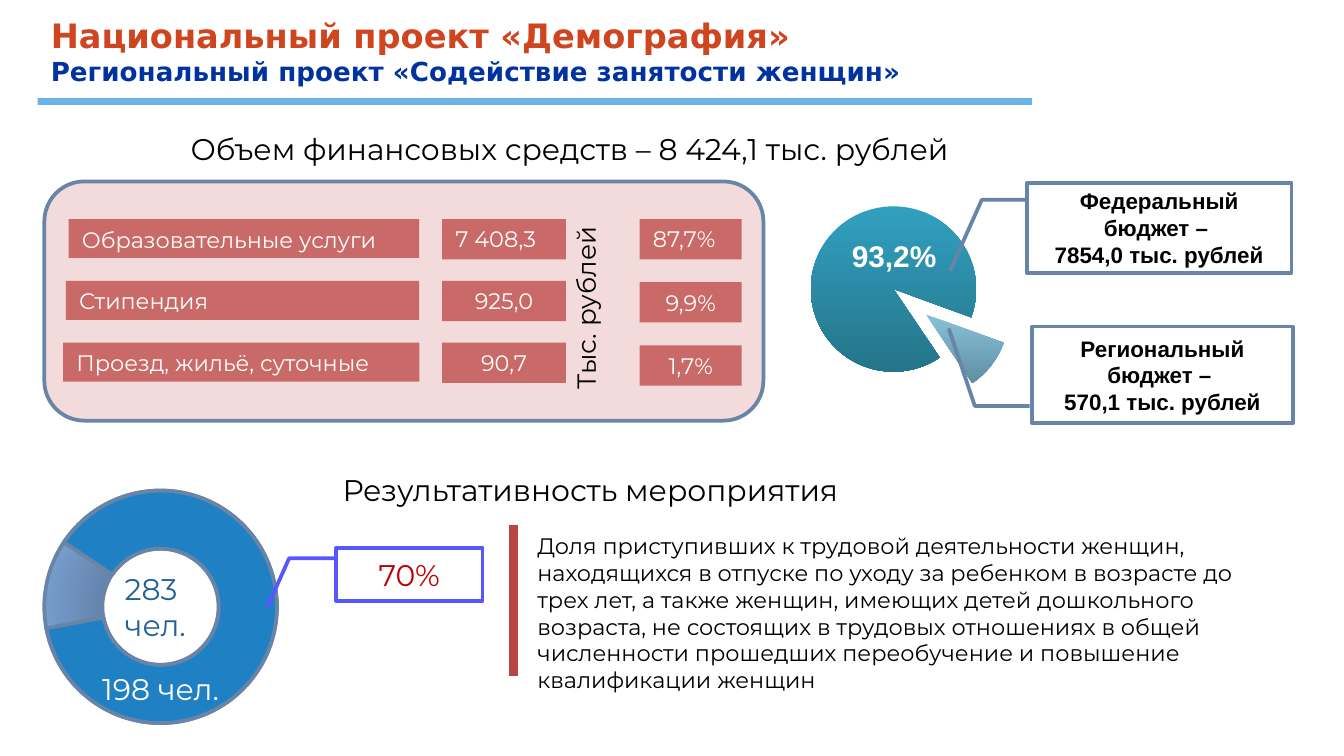
"""Builds the slide on the regional project supporting women's employment."""
from lxml import etree
from pptx import Presentation
from pptx.chart.data import CategoryChartData
from pptx.dml.color import RGBColor
from pptx.enum.chart import XL_CHART_TYPE
from pptx.enum.shapes import MSO_CONNECTOR, MSO_SHAPE
from pptx.enum.text import MSO_ANCHOR, MSO_AUTO_SIZE, PP_ALIGN
from pptx.oxml import parse_xml
from pptx.oxml.ns import nsdecls, qn
from pptx.util import Inches, Pt

LEFT, CENTER = PP_ALIGN.LEFT, PP_ALIGN.CENTER
TOP, MIDDLE = MSO_ANCHOR.TOP, MSO_ANCHOR.MIDDLE
GROW = MSO_AUTO_SIZE.SHAPE_TO_FIT_TEXT
PIE, STRAIGHT = XL_CHART_TYPE.PIE, MSO_CONNECTOR.STRAIGHT
RECT, CALLOUT = MSO_SHAPE.RECTANGLE, MSO_SHAPE.LINE_CALLOUT_2
PANEL, DONUT, ARC = MSO_SHAPE.ROUNDED_RECTANGLE, MSO_SHAPE.DONUT, MSO_SHAPE.BLOCK_ARC

THEME = {
    "colors": {
        "black": "000000", "white": "FFFFFF", "orange": "CF4520", "navy": "0033A0",
        "sky": "69B3E7", "red": "B84542", "cell": "CA6A68", "panel": "F2DBDA",
        "slate": "6884A7", "ring": "1F81C3", "count": "236199", "violet": "5757FF",
        "crimson": "C00000",
    },
    "gradients": {
        "federal": ("31A0C0", "247589"), "regional": ("88C2D8", "5F8FA3"),
        "ring": ("506A8A", "87B2E8"),
    },
    "text": {
        "project": {"name": "DejaVu Sans", "size": Pt(18), "bold": True, "color": "orange"},
        "subproject": {"name": "DejaVu Sans", "size": Pt(14), "bold": True, "color": "navy"},
        "heading": {"name": "Montserrat", "size": Pt(16), "color": "black"},
        "body": {"name": "Montserrat", "size": Pt(12), "color": "black"},
        "unit": {"name": "Montserrat", "size": Pt(14), "color": "black"},
        "cell": {"name": "Montserrat", "size": Pt(12), "color": "white"},
        "count": {"name": "Montserrat", "size": Pt(16), "color": "count"},
        "employed": {"name": "Montserrat", "size": Pt(16), "color": "white"},
        "result": {"name": "Montserrat", "size": Pt(16), "color": "crimson"},
        "budget": {"name": "Arial", "size": Pt(12), "bold": True, "color": "black"},
        "share": {"name": "Arial", "size": Pt(16), "bold": True, "color": "white"},
    },
}

TITLE = [("Национальный проект «Демография»", "project"),
         ("Региональный проект «Содействие занятости женщин»", "subproject")]
FUNDING = [("Объем финансовых средств – 8 424,1 тыс. рублей", "heading")]
EFFECT = [("Результативность мероприятия", "heading")]
INDICATOR = [(
    "Доля приступивших к трудовой деятельности женщин, находящихся в отпуске по уходу "
    "за ребенком в возрасте до трех лет, а также женщин, имеющих детей дошкольного "
    "возраста, не состоящих в трудовых отношениях в общей численности прошедших "
    "переобучение и повышение квалификации женщин", "body")]
TRAINED = [("283", "count"), ("чел.", "count")]
EMPLOYED = [("198 чел.", "employed")]
RESULT = [("70%", "result")]
UNIT = [("Тыс. рублей", "unit")]
FEDERAL_SHARE = [("93,2%", "share")]
EXPENSES = [("Образовательные услуги", "7 408,3", "87,7%"),
            ("Стипендия", "925,0", "9,9%"),
            ("Проезд, жильё, суточные", "90,7", "1,7%")]
BUDGETS = [
    (["Федеральный бюджет – ", "7854,0 тыс. рублей"], (7.64, 1.36, 1.97, 0.67),
     (0.19, 0, 0.19, -0.17, 0.98, -0.29)),
    (["Региональный бюджет – ", "570,1 тыс. рублей"], (7.68, 2.43, 1.94, 0.72),
     (0.82, -0.01, 0.82, -0.22, 0.02, -0.32)),
]
BUDGET_PIE = [("1", 90, "federal"), ("2", 10, "regional")]
PIE_START = 146
RING_BOX = (0.33, 3.65, 1.73, 1.73)


def color(key):
    return RGBColor.from_string(THEME["colors"][key])


def write(shape, lines, align=LEFT, **frame_format):
    frame = shape.text_frame
    for key, value in {"word_wrap": True, "vertical_anchor": TOP, **frame_format}.items():
        setattr(frame, key, value)
    for index, (line, style) in enumerate(lines):
        paragraph = frame.add_paragraph() if index else frame.paragraphs[0]
        paragraph.alignment = align
        run = paragraph.add_run()
        run.text = line
        for key, value in THEME["text"][style].items():
            if key == "color":
                run.font.color.rgb = color(value)
            else:
                setattr(run.font, key, value)


def add_text(slide, box, lines, align=LEFT, wrap=True):
    label = slide.shapes.add_textbox(*map(Inches, box))
    write(label, lines, align, word_wrap=wrap, auto_size=GROW)
    return label


def add_block(slide, preset, box, fill=None, line=None, adjust=()):
    block = slide.shapes.add_shape(preset, *map(Inches, box))
    block.shadow.inherit = False
    for target, key in ((block.fill, fill), (block.line.fill, line)):
        if key:
            target.solid()
            target.fore_color.rgb = color(key)
        else:
            target.background()
    if line:
        block.line.width = Pt(2)
    for index, value in enumerate(adjust):
        block.adjustments[index] = value
    return block


def set_gradient(fill, key):
    fill.gradient()
    fill.gradient_angle = 270
    for stop, value, position in zip(fill.gradient_stops, THEME["gradients"][key], (0, 1)):
        stop.color.rgb = RGBColor.from_string(value)
        stop.position = position


def add_ring(slide):
    ring = add_block(slide, DONUT, RING_BOX, line="slate")
    set_gradient(ring.fill, "ring")
    linear = ring._element.spPr.find(qn("a:gradFill")).find(qn("a:lin"))
    linear.getparent().replace(linear, parse_xml(
        f'<a:path {nsdecls("a")} path="circle">'
        '<a:fillToRect l="50000" t="50000" r="50000" b="50000"/></a:path>'))
    arc = add_block(slide, ARC, RING_BOX, "ring", "slate", (26.61, 0, 0.25))
    arc.rotation = 169.4
    add_text(slide, (0.83, 4.2, 0.74, 0.64), TRAINED, wrap=False)
    add_text(slide, (0.56, 4.94, 1.27, 0.37), EMPLOYED, CENTER)


def add_budget_pie(slide):
    data = CategoryChartData()
    data.categories = [name for name, _, _ in BUDGET_PIE]
    data.add_series("Series 1", [value for _, value, _ in BUDGET_PIE])
    box = map(Inches, (5.55, 1.35, 2.44, 1.81))
    chart = slide.shapes.add_chart(PIE, *box, data).chart
    chart.has_legend = chart.has_title = False
    chart.font.name, chart.font.size = "Calibri", Pt(18)
    chart.font.color.rgb = color("black")
    plot = chart.plots[0]
    plot.vary_by_categories = True
    series = plot.series[0]
    for index, (_, _, gradient) in enumerate(BUDGET_PIE):
        point_format = series.points[index].format
        set_gradient(point_format.fill, gradient)
        point_format.line.fill.background()
    series._element.find(qn("c:dPt")).addprevious(
        parse_xml(f'<c:explosion {nsdecls("c")} val="25"/>'))
    pie = plot._element
    angle = pie.find(qn("c:firstSliceAng"))
    if angle is None:
        angle = etree.SubElement(pie, qn("c:firstSliceAng"))
    angle.set("val", str(PIE_START))
    area = pie.getparent()
    for layout in area.findall(qn("c:layout")):
        area.remove(layout)
    parts = {"layoutTarget": "inner", "xMode": "edge", "yMode": "edge",
             "x": 0.18, "y": 0.07, "w": 0.64, "h": 0.85}
    settings = "".join(f'<c:{key} val="{value}"/>' for key, value in parts.items())
    area.insert(0, parse_xml(
        f'<c:layout {nsdecls("c")}><c:manualLayout>{settings}</c:manualLayout></c:layout>'))


def add_expenses(slide):
    add_block(slide, PANEL, (0.33, 1.35, 5.35, 1.78), line="slate", fill="panel")
    for row, (expense, amount, share) in enumerate(EXPENSES):
        label_left = 0.51 - 0.02 * row
        number_align = CENTER if row else LEFT
        cells = [(expense, (label_left, 1.63 + 0.46 * row, 3.12 - label_left, 0.29), LEFT),
                 (amount, (3.29, 1.63 + 0.46 * row, 0.92, 0.3), number_align),
                 (share, (4.76, 1.63 + 0.47 * row, 0.76, 0.3), number_align)]
        for entry, box, align in cells:
            write(add_block(slide, RECT, box, "cell"), [(entry, "cell")], align)
    unit = add_text(slide, (4.19, 1.52, 0.44, 1.48), UNIT, wrap=False)
    unit.text_frame._txBody.bodyPr.set("vert", "vert270")


def main():
    deck = Presentation()
    deck.slide_width = Inches(10)
    deck.slide_height = deck.slide_width * 9 // 16
    slide = deck.slides.add_slide(deck.slide_layouts[6])
    add_text(slide, (3.9, 3.91, 5.75, 1.31), INDICATOR)
    add_text(slide, (0.28, 0.06, 7.56, 0.64), TITLE)
    add_block(slide, RECT, (0.28, 0.73, 7.4, 0.05), "sky")
    add_text(slide, (1.32, 0.92, 6.6, 0.37), FUNDING, wrap=False)
    divider = slide.shapes.add_connector(STRAIGHT, *map(Inches, (3.82, 3.91, 3.82, 5.03)))
    divider.line.color.rgb, divider.line.width = color("red"), Pt(4.5)
    etree.SubElement(divider._element.spPr, qn("a:effectLst"))
    add_ring(slide)
    result = add_block(slide, CALLOUT, (2.5, 4.08, 1.09, 0.39), line="violet",
                       adjust=(0.19, 0.01, 0.19, -0.32, 1.13, -0.47))
    write(result, RESULT, CENTER, vertical_anchor=MIDDLE)
    add_text(slide, (2.45, 3.46, 4.21, 0.37), EFFECT, wrap=False)
    add_budget_pie(slide)
    for lines, box, pointer in BUDGETS:
        budget = add_block(slide, CALLOUT, box, "white", "slate", pointer)
        write(budget, [(line, "budget") for line in lines], CENTER, vertical_anchor=MIDDLE)
    add_text(slide, (6.24, 1.72, 0.84, 0.37), FEDERAL_SHARE, wrap=False)
    add_expenses(slide)
    deck.save("out.pptx")


if __name__ == "__main__":
    main()
